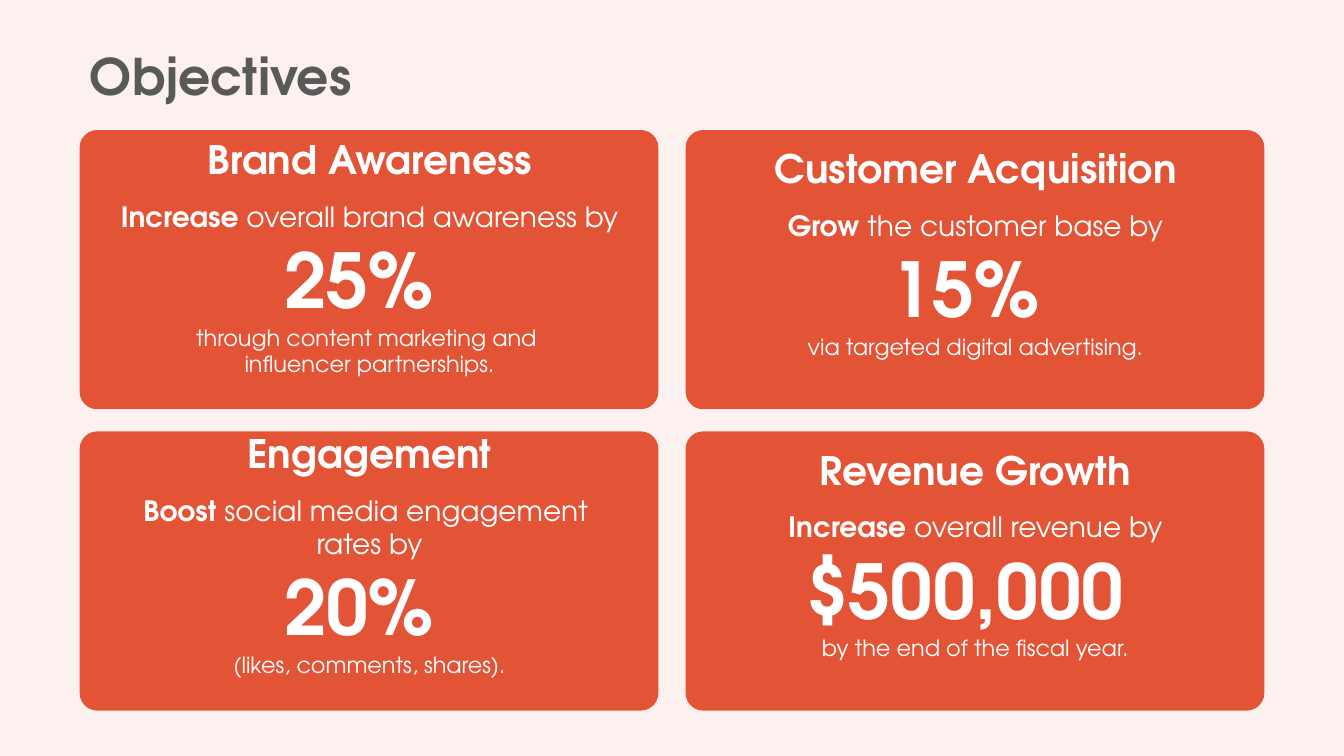
import copy
import pptx
import pptx.util
import pptx.dml.color
import pptx.enum.shapes
import pptx.enum.text

Inches, Pt = pptx.util.Inches, pptx.util.Pt
ALIGN = pptx.enum.text.PP_ALIGN

THEME = {
    "font": "TeX Gyre Adventor",
    "page": "FDF1EF", "card": "E35336", "title": "595959", "text": "FFFFFF",
    "title_size": 36, "heading_size": 28, "lead_size": 20,
    "figure_size": 54, "detail_size": 16,
}

# Card grid in inches
LEFT, TOP = 0.79, 1.29
CARD_WIDTH, CARD_HEIGHT = 5.74, 2.77
COLUMN_STEP, ROW_STEP = 6.01, 2.99
TEXT_INSET, TEXT_WIDTH, TEXT_MIDDLE = 0.2, 5.35, 1.33

# Heading, bold verb, rest of lead, figure, detail, height of the text
OBJECTIVES = [
    ("Brand Awareness", "Increase ", "overall brand awareness by", "25% ",
     "through content marketing and \ninfluencer partnerships.", 2.65),
    ("Customer Acquisition", "Grow ", "the customer base by", "15% ",
     "via targeted digital advertising.", 2.47),
    ("Engagement", "Boost ", "social media engagement \nrates by", "20% ",
     "(likes, comments, shares).", 2.8),
    ("Revenue Growth", "Increase ", "overall revenue by", "$500,000 ",
     "by the end of the fiscal year.", 2.47),
]


def color(name):
    return pptx.dml.color.RGBColor.from_string(THEME[name])


def add_spans(para, text, role, bold, ink="text"):
    """Add one run per line, with a line break of the same size between."""
    for number, line in enumerate(text.split("\n")):
        if number:
            para.add_line_break()
            para._p[-1].append(copy.deepcopy(span._r.rPr))
        span = para.add_run()
        span.text = line
        span.font.name = THEME["font"]
        span.font.size = Pt(THEME[role + "_size"])
        span.font.bold = bold
        span.font.color.rgb = color(ink)


deck = pptx.Presentation()
deck.slide_width, deck.slide_height = Inches(13.33), Inches(7.5)
page = deck.slides.add_slide(deck.slide_layouts[5])
page.background.fill.solid()
page.background.fill.fore_color.rgb = color("page")

# Title
title = page.shapes.title
title.left, title.top = Inches(LEFT), Inches(0.4)
title.width, title.height = Inches(9.3), Inches(0.71)
title.text_frame.auto_size = pptx.enum.text.MSO_AUTO_SIZE.NONE
title.text_frame.vertical_anchor = pptx.enum.text.MSO_ANCHOR.TOP
title_para = title.text_frame.paragraphs[0]
title_para.alignment = ALIGN.LEFT
add_spans(title_para, "Objectives", "title", True, "title")

# Objective cards, two to a row
for index, (heading, verb, lead, figure, detail, height) in enumerate(OBJECTIVES):
    row, column = divmod(index, 2)
    left, top = LEFT + column * COLUMN_STEP, TOP + row * ROW_STEP

    card = page.shapes.add_shape(
        pptx.enum.shapes.MSO_SHAPE.ROUNDED_RECTANGLE,
        Inches(left), Inches(top), Inches(CARD_WIDTH), Inches(CARD_HEIGHT))
    card.adjustments[0] = 0.063
    card.shadow.inherit = False
    card.fill.solid()
    card.fill.fore_color.rgb = color("card")
    card.line.fill.background()

    # Text, centred on one height in every card
    box = page.shapes.add_textbox(
        Inches(left + TEXT_INSET), Inches(top + TEXT_MIDDLE - height / 2),
        Inches(TEXT_WIDTH), Inches(height))
    frame = box.text_frame
    frame.word_wrap = True
    frame.auto_size = pptx.enum.text.MSO_AUTO_SIZE.SHAPE_TO_FIT_TEXT
    lines = [
        ("heading", 9, 9, [(heading, True)]),
        ("lead", 3, 0, [(verb, True), (lead, False)]),
        ("figure", 0, 0, [(figure, True)]),
        ("detail", 0, 0, [(detail, False)]),
    ]
    for number, (role, before, after, spans) in enumerate(lines):
        para = frame.add_paragraph() if number else frame.paragraphs[0]
        para.alignment = ALIGN.CENTER
        para.space_before, para.space_after = Pt(before), Pt(after)
        for text, bold in spans:
            add_spans(para, text, role, bold)

deck.save("out.pptx")
